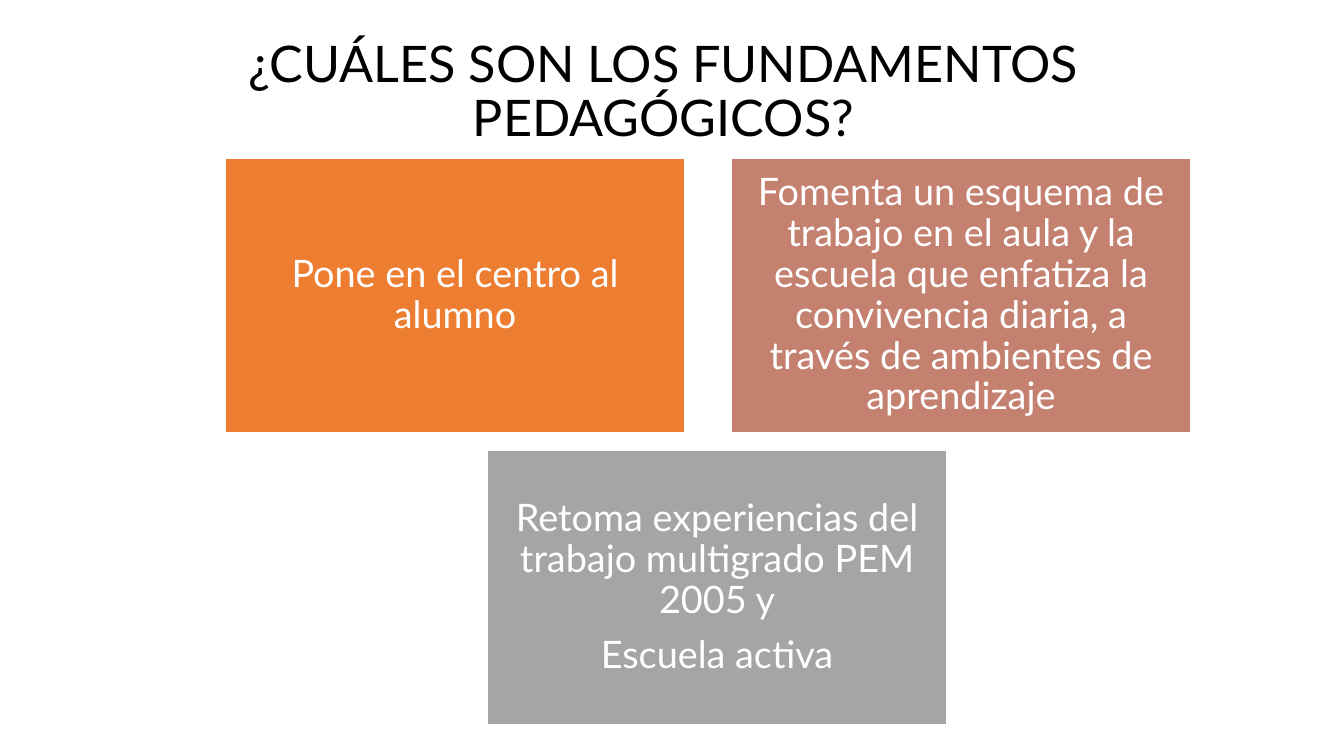
from pptx import Presentation
from pptx.dml.color import RGBColor
from pptx.enum.shapes import MSO_SHAPE as Shape
from pptx.enum.text import MSO_ANCHOR as Anchor, PP_ALIGN as Align
from pptx.util import Pt

EMU_PER_PX = 914400 / 100.8
CARD_W, CARD_H = 460, 275
CARDS = [
    (225, 158, "ED7D31", ["Pone en el centro al alumno"]),
    (731, 158, "C48170", ["Fomenta un esquema de trabajo en el aula y la escuela que enfatiza "
                          "la convivencia diaria, a través de ambientes de aprendizaje"]),
    (487, 450, "A5A5A5", ["Retoma experiencias del trabajo multigrado PEM 2005 y",
                          "Escuela activa"]),
]


def px(length):
    return round(length * EMU_PER_PX)


def color(value):
    return RGBColor.from_string(value)


def write(shape, paragraphs, size, ink, margin_x, margin_y, after=0):
    frame = shape.text_frame
    frame.word_wrap = True
    frame.vertical_anchor = Anchor.MIDDLE
    frame.margin_left = frame.margin_right = px(margin_x)
    frame.margin_top = frame.margin_bottom = px(margin_y)
    for index, text in enumerate(paragraphs):
        paragraph = frame.add_paragraph() if index else frame.paragraphs[0]
        paragraph.alignment = Align.CENTER
        paragraph.line_spacing = 0.9
        paragraph.space_after = Pt(after)
        run = paragraph.add_run()
        run.text = text
        run.font.name = "Lato"
        run.font.size = Pt(size)
        run.font.color.rgb = color(ink)


def add_title(slide, left, top, width, height):
    title = slide.shapes.add_textbox(px(left), px(top), px(width), px(height))
    write(title, ["¿CUÁLES SON LOS FUNDAMENTOS PEDAGÓGICOS?"], 36, "000000", 10, 5)


def add_card(slide, left, top, width, height, fill, paragraphs):
    card = slide.shapes.add_shape(Shape.RECTANGLE, px(left), px(top), px(width), px(height))
    card.shadow.inherit = False
    card.fill.solid()
    card.fill.fore_color.rgb = color(fill)
    card.line.color.rgb = color("FFFFFF")
    card.line.width = Pt(1)
    write(card, paragraphs, 27, "FFFFFF", 11, 11, after=10)


def main():
    deck = Presentation()
    deck.slide_width, deck.slide_height = px(1344), px(756)
    slide = deck.slides.add_slide(deck.slide_layouts[6])
    add_title(slide, 84, 20, 1159, 146)
    for left, top, fill, paragraphs in CARDS:
        add_card(slide, left, top, CARD_W, CARD_H, fill, paragraphs)
    deck.save("out.pptx")


if __name__ == "__main__":
    main()
